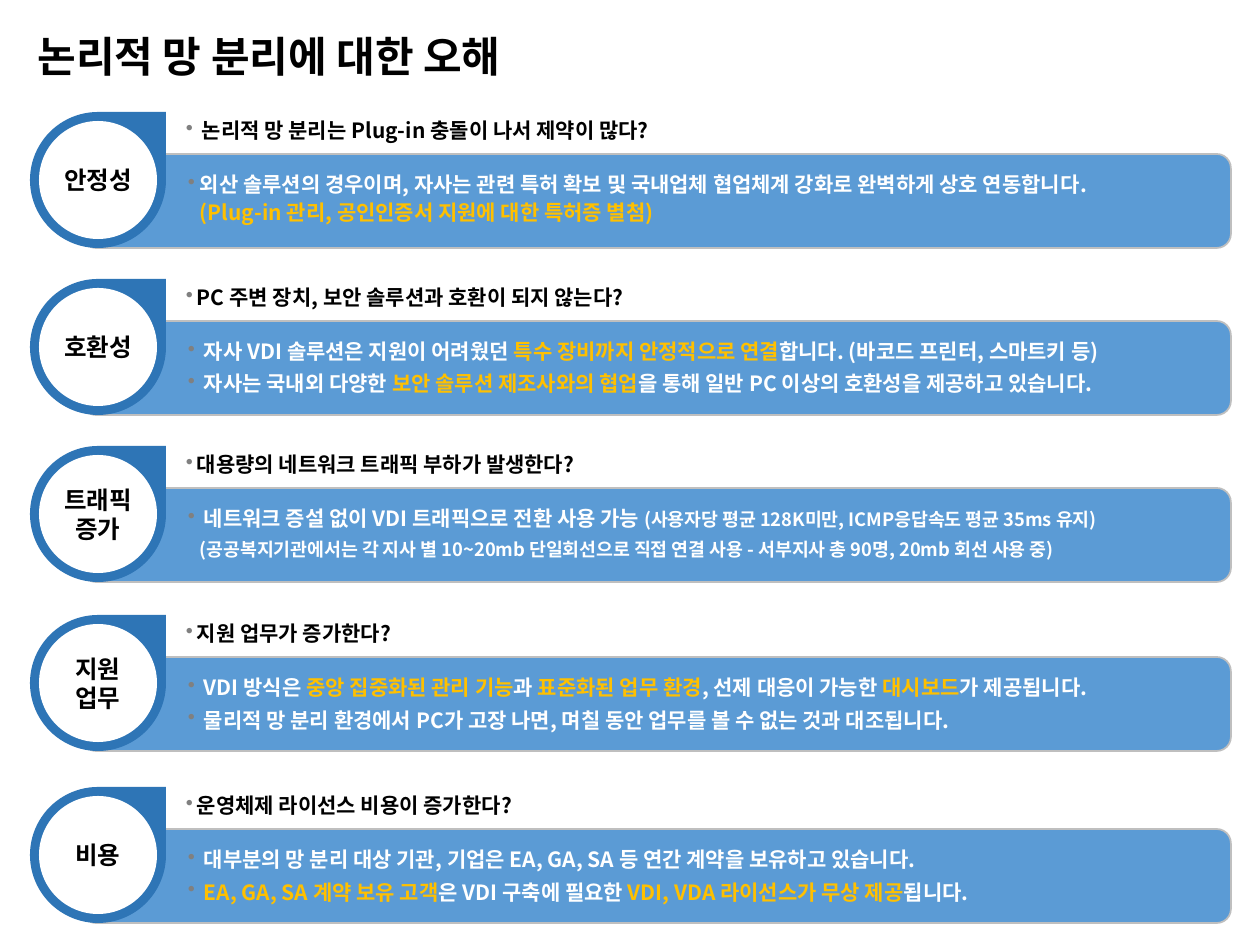
from dataclasses import dataclass

from lxml.etree import SubElement
from pptx import Presentation
from pptx.dml.color import RGBColor
from pptx.enum.shapes import MSO_SHAPE
from pptx.enum.text import MSO_ANCHOR, PP_ALIGN
from pptx.oxml.ns import qn
from pptx.util import Pt


@dataclass(frozen=True)
class Theme:
    font: str = "Noto Sans CJK KR"
    black: str = "000000"
    white: str = "FFFFFF"
    accent: str = "FFC000"
    bar: str = "5B9BD5"
    bar_line: str = "BFBFBF"
    drop: str = "2E75B6"
    bullet: str = "808080"
    title: float = 24
    label: float = 14
    body: float = 12
    note: float = 10.5


T = Theme()


# Run styles: (text, colour, size)
def black(text, size=T.body):
    return text, T.black, size


def white(text):
    return text, T.white, T.body


def gold(text):
    return text, T.accent, T.body


def note(text):
    return text, T.white, T.note


# Paragraph layouts in px: (left margin, first-line indent, has bullet)
TIGHT = (32, -12, True)
BULLET = (31, -11, True)
WIDE = (36, -16, True)
PLAIN = (32, 0, False)

# Content: top in px, label, question with its layout, answer paragraphs
TITLE = "논리적 망 분리에 대한 오해"
TOPICS = [
    (112, "안정성", (WIDE, "논리적 망 분리는 Plug-in 충돌이 나서 제약이 많다?"), [
        (TIGHT, [white("외산 솔루션의 경우이며, 자사는 관련 특허 확보 및 국내업체 "
                       "협업체계 강화로 완벽하게 상호 연동합니다.\v"),
                 gold("(Plug-in 관리, 공인인증서 지원에 대한 특허증 별첨)")]),
    ]),
    (279, "호환성", (BULLET, "PC 주변 장치, 보안 솔루션과 호환이 되지 않는다?"), [
        (WIDE, [white("자사 VDI 솔루션은 지원이 어려웠던 "),
                gold("특수 장비까지 안정적으로 연결"),
                white("합니다. (바코드 프린터, 스마트키 등)")]),
        (WIDE, [white("자사는 국내외 다양한 "),
                gold("보안 솔루션 제조사와의 협업"),
                white("을 통해 일반 PC 이상의 호환성을 제공하고 있습니다.")]),
    ]),
    (446, "트래픽\v증가", (BULLET, "대용량의 네트워크 트래픽 부하가 발생한다?"), [
        (WIDE, [white("네트워크 증설 없이 VDI 트래픽으로 전환 사용 가능 "),
                note("(사용자당 평균 128K미만, ICMP응답속도 평균 35ms 유지)")]),
        (PLAIN, [note("(공공복지기관에서는 각 지사 별 10~20mb 단일회선으로 직접 연결 사용 "
                      "- 서부지사 총 90명, 20mb 회선 사용 중)")]),
    ]),
    (615, "지원\v업무", (BULLET, "지원 업무가 증가한다?"), [
        (WIDE, [white("VDI 방식은 "), gold("중앙 집중화된 관리 기능"), white("과 "),
                gold("표준화된 업무 환경"), white(", 선제 대응이 가능한 "),
                gold("대시보드"), white("가 제공됩니다.")]),
        (WIDE, [white("물리적 망 분리 환경에서 PC가 고장 나면, "
                      "며칠 동안 업무를 볼 수 없는 것과 대조됩니다.")]),
    ]),
    (787, "비용", (BULLET, "운영체제 라이선스 비용이 증가한다?"), [
        (WIDE, [white("대부분의 망 분리 대상 기관, 기업은 EA, GA, SA 등 "
                      "연간 계약을 보유하고 있습니다.")]),
        (WIDE, [gold("EA, GA, SA 계약 보유 고객"), white("은 VDI 구축에 필요한 "),
                gold("VDI, VDA 라이선스가 무상 제공"), white("됩니다.")]),
    ]),
]


def px(n):
    return round(n * 914400 / 126)


def rgb(color):
    return RGBColor.from_string(color)


def add_shape(s, kind, box, fill, line=None):
    sp = s.shapes.add_shape(kind, *map(px, box))
    sp.shadow.inherit = False
    sp.fill.solid()
    sp.fill.fore_color.rgb = rgb(fill)
    if line:
        sp.line.color.rgb = rgb(line)
        sp.line.width = Pt(1)
    else:
        sp.line.fill.background()
    return sp


def clear_margins(tf):
    tf.margin_left = tf.margin_right = tf.margin_top = tf.margin_bottom = 0


def add_runs(p, runs):
    for i, (text, color, size) in enumerate(runs):
        for j, piece in enumerate(text.split("\v")):
            if j:
                p.add_line_break()
            if not piece:
                continue
            r = p.add_run()
            r.text = piece
            r.font.name, r.font.size, r.font.bold = T.font, Pt(size), True
            r.font.color.rgb = rgb(color)
            SubElement(r.font._element, qn("a:ea"), typeface=T.font)


def add_list(s, box, paragraphs):
    tf = s.shapes.add_textbox(*map(px, box)).text_frame
    tf.word_wrap = True
    clear_margins(tf)
    for i, ((margin, indent, bullet), runs) in enumerate(paragraphs):
        p = tf.add_paragraph() if i else tf.paragraphs[0]
        pPr = p._p.get_or_add_pPr()
        pPr.set("marL", str(px(margin)))
        pPr.set("indent", str(px(indent)))
        if bullet:
            clr = SubElement(pPr, qn("a:buClr"))
            SubElement(clr, qn("a:srgbClr"), val=T.bullet)
            SubElement(pPr, qn("a:buChar"), char="•")
        p.line_spacing = 1.1
        if i:
            p.space_before = Pt(2.8)
        add_runs(p, runs)


def add_topic(s, top, label, question, answer):
    # Answer bar, teardrop and label circle
    bar = add_shape(s, MSO_SHAPE.ROUNDED_RECTANGLE, (82, top + 42, 1149, 94), T.bar, T.bar_line)
    bar.adjustments[0] = 0.15
    add_shape(s, MSO_SHAPE.TEAR, (30, top, 136, 136), T.drop)
    circle = add_shape(s, MSO_SHAPE.OVAL, (39, top + 9, 118, 118), T.white)
    tf = circle.text_frame
    tf.vertical_anchor = MSO_ANCHOR.MIDDLE
    clear_margins(tf)
    p = tf.paragraphs[0]
    p.alignment = PP_ALIGN.CENTER
    add_runs(p, [black(label, T.label)])

    # Question and answer
    layout, text = question
    add_list(s, (166, top + 3, 604, 28), [(layout, [black(text)])])
    add_list(s, (168, top + 57, 1060, 60), answer)


def main():
    prs = Presentation()
    prs.slide_width, prs.slide_height = px(1260), px(945)
    s = prs.slides.add_slide(prs.slide_layouts[6])

    # Title
    tf = s.shapes.add_textbox(*map(px, (25, 24, 1050, 63))).text_frame
    tf.word_wrap = True
    add_runs(tf.paragraphs[0], [black(TITLE, T.title)])

    for topic in TOPICS:
        add_topic(s, *topic)
    prs.save("out.pptx")


if __name__ == "__main__":
    main()
